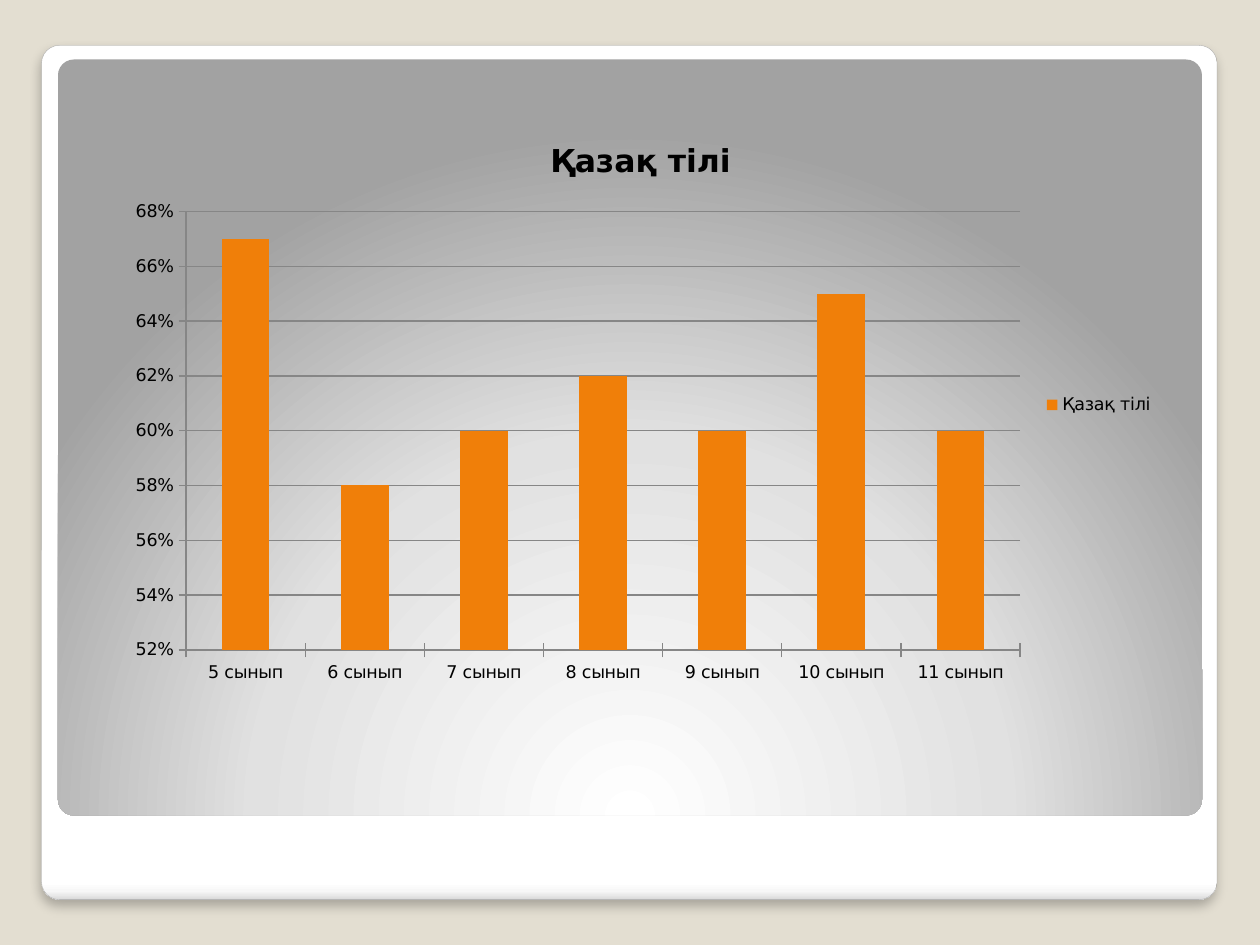
from lxml.etree import SubElement
from pptx import Presentation
from pptx.chart.data import CategoryChartData
from pptx.dml.color import RGBColor
from pptx.enum.chart import XL_CHART_TYPE, XL_LEGEND_POSITION, XL_TICK_MARK
from pptx.enum.shapes import MSO_SHAPE
from pptx.oxml import parse_xml
from pptx.oxml.ns import nsdecls, qn
from pptx.util import Inches, Pt

COLORS = {"background": "E3DED1", "outline": "A4A4A4", "text": "000000",
          "grid": "868686", "bar": "F07F09", "shadow": "000000"}
FONT = "DejaVu Sans"
SUBJECT = "Қазақ тілі"
RESULTS = {5: 0.67, 6: 0.58, 7: 0.6, 8: 0.62, 9: 0.6, 10: 0.65, 11: 0.6}
WIDTH, HEIGHT = Inches(10), Inches(7.5)
CARD = (0.033, 0.048, 0.933, 0.904)
PANEL = (0.046, 0.063, 0.908, 0.8)
CHART = (0.091, 0.123, 0.835, 0.611)
CARD_STOPS = {0: "FFFFFF", 98: "FFFFFF", 99: "F7F7F7", 100: "DADADA"}
PANEL_STOPS = {0: "FFFFFF", 55: "E1E1E1", 100: "A2A2A2"}
DOWNWARD = '<a:lin ang="5400000" scaled="0"/>'
FROM_BOTTOM = ('<a:path path="circle"><a:fillToRect l="50000" t="175000" '
               'r="50000" b="-75000"/></a:path>')


def color(name):
    """Return a named colour of the slide."""
    return RGBColor.from_string(COLORS[name])


def place(shares):
    """Turn shares of the slide's size into left, top, width and height."""
    return [round(share * side) for share, side in zip(shares, (WIDTH, HEIGHT) * 2)]


def add_rounded_panel(slide, shares, stops, direction):
    """Add a rounded rectangle with a gradient fill and no line."""
    shape = slide.shapes.add_shape(MSO_SHAPE.ROUNDED_RECTANGLE, *place(shares))
    shape.adjustments[0] = 0.021
    shape.shadow.inherit = False
    shape.line.fill.background()
    stop_list = "".join(
        f'<a:gs pos="{position * 1000}"><a:srgbClr val="{value}"/></a:gs>'
        for position, value in stops.items())
    gradient = parse_xml(f'<a:gradFill {nsdecls("a")} rotWithShape="1">'
                         f'<a:gsLst>{stop_list}</a:gsLst>{direction}</a:gradFill>')
    shape.element.spPr.find(qn("a:prstGeom")).addnext(gradient)
    return shape


def add_outer_shadow(shape):
    """Give a shape a soft shadow that falls downward."""
    effects = shape.element.spPr.find(qn("a:effectLst"))
    shadow = SubElement(effects, qn("a:outerShdw"), blurRad=str(Pt(6)),
                        dist=str(Pt(4)), dir="5400000", algn="tl", rotWithShape="0")
    shade = SubElement(shadow, qn("a:srgbClr"), val=COLORS["shadow"])
    SubElement(shade, qn("a:alpha"), val="25000")


def style_font(font, size, bold=False):
    """Set face, size, weight and colour of a font."""
    font.name, font.size, font.bold = FONT, Pt(size), bold
    font.color.rgb = color("text")


def style_line(line):
    """Draw a chart line in the thin grid colour."""
    line.color.rgb = color("grid")
    line.width = Pt(0.75)


def style_axes(chart):
    """Set scale, ticks and lines of both axes."""
    values = chart.value_axis
    values.minimum_scale, values.maximum_scale, values.major_unit = 0.52, 0.68, 0.02
    values.tick_labels.number_format = "0%"
    values.tick_labels.number_format_is_linked = False
    values.has_major_gridlines = True
    style_line(values.major_gridlines.format.line)
    for axis in (values, chart.category_axis):
        axis.major_tick_mark = XL_TICK_MARK.CROSS
        style_line(axis.format.line)


def add_results_chart(slide):
    """Add the column chart of results by grade."""
    data = CategoryChartData(number_format="0%")
    data.categories = [f"{grade} сынып" for grade in RESULTS]
    data.add_series(SUBJECT, RESULTS.values())
    chart = slide.shapes.add_chart(
        XL_CHART_TYPE.COLUMN_CLUSTERED, *place(CHART), data).chart
    style_font(chart.font, 10)
    chart.has_title = True
    title = chart.chart_title.text_frame
    title.text = SUBJECT
    style_font(title.paragraphs[0].font, 18, bold=True)
    chart.has_legend = True
    chart.legend.position = XL_LEGEND_POSITION.RIGHT
    chart.legend.include_in_layout = False
    plot = chart.plots[0]
    plot.gap_width = 150
    plot.vary_by_categories = False
    bars = plot.series[0].format.fill
    bars.solid()
    bars.fore_color.rgb = color("bar")
    style_axes(chart)


def main():
    """Build the slide and save it."""
    presentation = Presentation()
    presentation.slide_width, presentation.slide_height = WIDTH, HEIGHT
    slide = presentation.slides.add_slide(presentation.slide_layouts[6])
    slide.background.fill.solid()
    slide.background.fill.fore_color.rgb = color("background")
    card = add_rounded_panel(slide, CARD, CARD_STOPS, DOWNWARD)
    card.line.color.rgb = color("outline")
    card.line.width = Pt(0.16)
    add_outer_shadow(card)
    add_rounded_panel(slide, PANEL, PANEL_STOPS, FROM_BOTTOM)
    add_results_chart(slide)
    presentation.save("out.pptx")


if __name__ == "__main__":
    main()
